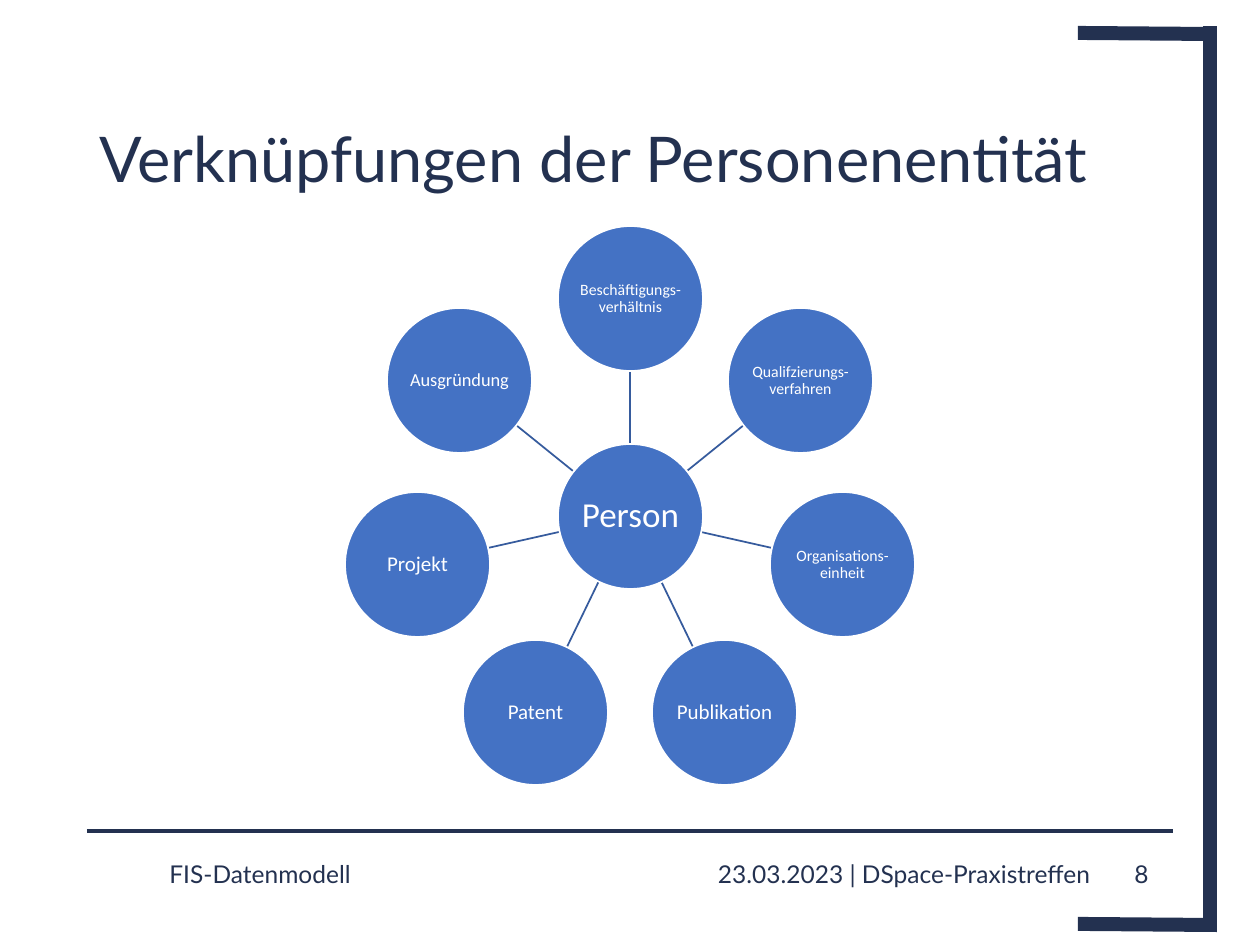
import math
from pptx import Presentation
from pptx.dml.color import RGBColor
from pptx.enum.shapes import MSO_CONNECTOR, MSO_SHAPE
from pptx.enum.text import MSO_ANCHOR, PP_ALIGN
from pptx.oxml.ns import qn
from pptx.oxml.xmlchemy import OxmlElement
from pptx.util import Emu, Pt

PX = 914400 // 126
STRAIGHT, OVAL = MSO_CONNECTOR.STRAIGHT, MSO_SHAPE.OVAL
MIDDLE, BOTTOM = MSO_ANCHOR.MIDDLE, MSO_ANCHOR.BOTTOM
LEFT, CENTER, RIGHT = PP_ALIGN.LEFT, PP_ALIGN.CENTER, PP_ALIGN.RIGHT

THEME = {
    "navy": RGBColor.from_string("233150"),
    "blue": RGBColor.from_string("4472C4"),
    "spoke": RGBColor.from_string("365B9D"),
    "white": RGBColor.from_string("FFFFFF"),
    "font": "Lato",
    "node_font": "Calibri",
    "title": 36,
    "footer": 14,
}

prs = Presentation()
prs.slide_width = Emu(1260 * PX)
prs.slide_height = Emu(945 * PX)
s = prs.slides.add_slide(prs.slide_layouts[6])


def add_line(x1, y1, x2, y2, color, width):
    line = s.shapes.add_connector(STRAIGHT, *[Emu(round(v) * PX) for v in (x1, y1, x2, y2)])
    line.line.color.rgb = THEME[color]
    line.line.width = Pt(width)
    line._element.spPr.append(OxmlElement("a:effectLst"))
    return line


def write(sp, text, font, size, color, align, anchor):
    tf = sp.text_frame
    tf.word_wrap = True
    tf.vertical_anchor = anchor
    tf.text = text
    p = tf.paragraphs[0]
    p.alignment = align
    r = p.runs[0]
    r.font.name = THEME[font]
    r.font.size = Pt(size)
    r.font.color.rgb = THEME[color]
    return p


for ends in [(1210, 33, 1210, 925), (1085, 33, 1210, 34), (1085, 924, 1210, 925)]:
    bracket = add_line(*ends, "navy", 8)
    bracket._element.spPr.find(qn("a:ln")).set("cap", "sq")
add_line(87, 831, 1173, 831, "navy", 2)

labels = [
    ("Verknüpfungen der Personenentität", 87, 52, 1086, 150, "title", LEFT, BOTTOM),
    ("23.03.2023 | DSpace-Praxistreffen", 649, 848, 454, 51, "footer", RIGHT, MIDDLE),
    ("FIS-Datenmodell", 157, 848, 455, 51, "footer", LEFT, MIDDLE),
    ("8", 1116, 848, 51, 51, "footer", CENTER, MIDDLE),
]
for text, x, y, w, h, role, align, anchor in labels:
    sp = s.shapes.add_textbox(*[Emu(v * PX) for v in (x, y, w, h)])
    p = write(sp, text, "font", THEME[role], "navy", align, anchor)
    if role == "title":
        p.line_spacing = 0.9

CX, CY, ORBIT, DIAMETER = 630, 516, 218, 145
satellites = [
    ("Beschäftigungs-verhältnis", 9),
    ("Qualifzierungs-verfahren", 9),
    ("Organisations-einheit", 9),
    ("Publikation", 12),
    ("Patent", 12),
    ("Projekt", 12),
    ("Ausgründung", 10.5),
]
nodes = [("Person", 20, CX, CY)]
for i, (text, size) in enumerate(satellites):
    angle = 2 * math.pi * i / len(satellites)
    dx, dy = math.sin(angle), -math.cos(angle)
    nodes.append((text, size, CX + ORBIT * dx, CY + ORBIT * dy))
    inner, outer = DIAMETER / 2, ORBIT - DIAMETER / 2
    add_line(CX + inner * dx, CY + inner * dy, CX + outer * dx, CY + outer * dy, "spoke", 1)

for text, size, x, y in nodes:
    left, top = round(x - DIAMETER / 2), round(y - DIAMETER / 2)
    sp = s.shapes.add_shape(OVAL, *[Emu(v * PX) for v in (left, top, DIAMETER, DIAMETER)])
    sp.shadow.inherit = False
    sp.fill.solid()
    sp.fill.fore_color.rgb = THEME["blue"]
    sp.line.color.rgb = THEME["white"]
    sp.line.width = Pt(1)
    tf = sp.text_frame
    tf.margin_left = tf.margin_right = tf.margin_top = tf.margin_bottom = Emu(PX)
    p = write(sp, text, "node_font", size, "white", CENTER, MIDDLE)
    p.line_spacing = 0.9

prs.save("out.pptx")
